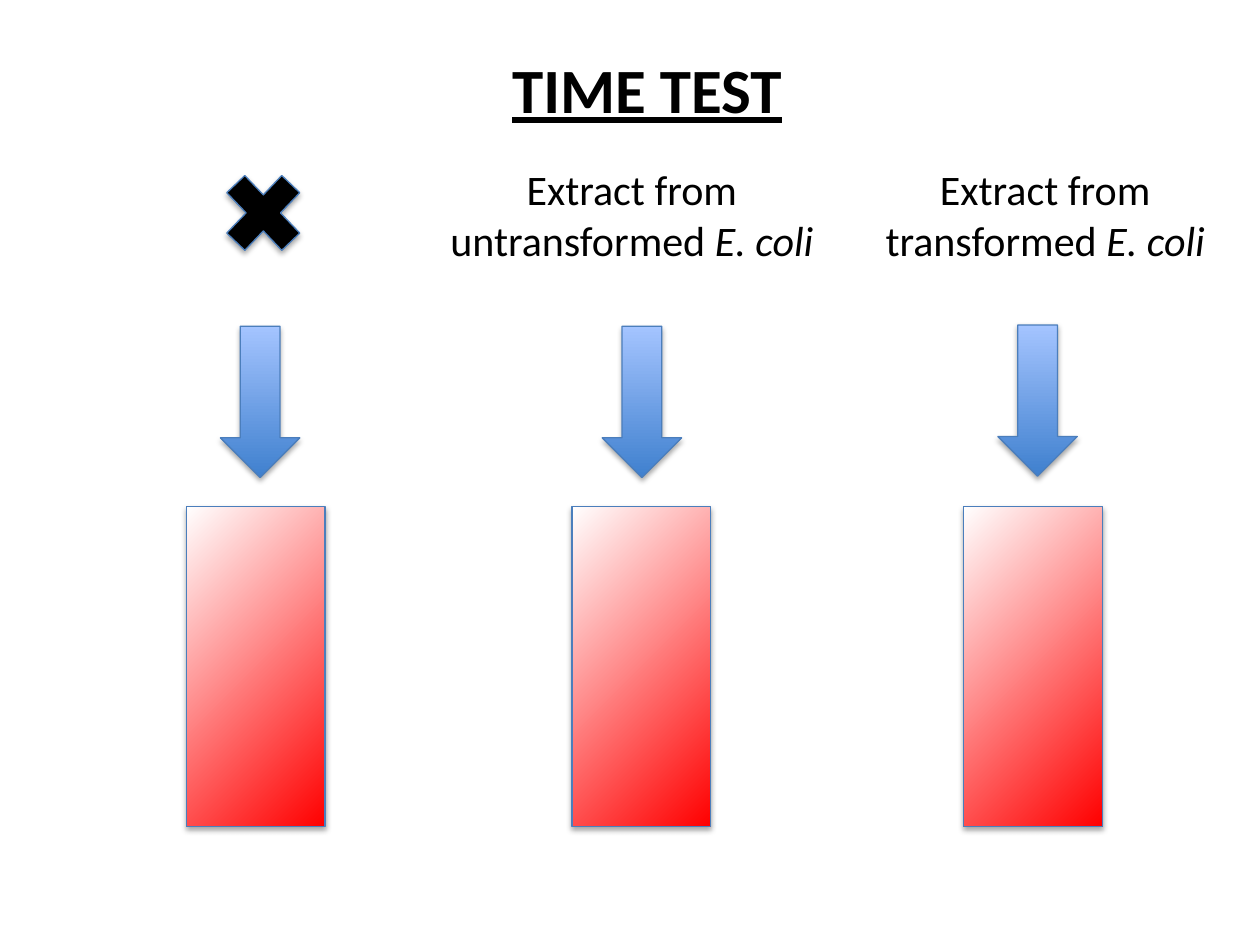
from lxml import etree
from pptx import Presentation
from pptx.dml.color import RGBColor
from pptx.enum.shapes import MSO_SHAPE
from pptx.enum.text import MSO_ANCHOR, MSO_AUTO_SIZE, PP_ALIGN
from pptx.oxml import parse_xml
from pptx.oxml.ns import nsdecls, qn
from pptx.util import Inches, Pt

RECTANGLE = MSO_SHAPE.RECTANGLE
DOWN_ARROW = MSO_SHAPE.DOWN_ARROW
CROSS = MSO_SHAPE.MATH_MULTIPLY
TOP = MSO_ANCHOR.TOP
CENTER = PP_ALIGN.CENTER
FIT_SHAPE = MSO_AUTO_SIZE.SHAPE_TO_FIT_TEXT

BLACK = RGBColor(0x00, 0x00, 0x00)
WHITE = RGBColor(0xFF, 0xFF, 0xFF)
RED = RGBColor(0xFF, 0x00, 0x00)
DARK_BLUE = RGBColor(0x3F, 0x80, 0xCE)
LIGHT_BLUE = RGBColor(0xA4, 0xC4, 0xFF)
OUTLINE = RGBColor(0x4B, 0x7E, 0xBC)

TITLE_FORMAT = {"name": "Calibri", "size": Pt(36), "bold": True, "underline": True}
CAPTION_FORMAT = {"name": "Calibri", "size": Pt(24)}

TUBE_LEFTS = (1.48, 4.54, 7.65)
ARROW_PLACES = ((1.75, 2.59), (4.78, 2.59), (7.92, 2.58))
CAPTIONS = (
    (3.31, "Extract from untransformed "),
    (6.59, "Extract from transformed "),
)


def add_span(para, text, formats):
    span = para.add_run()
    span.text = text
    span.font.color.rgb = BLACK
    for name, value in formats.items():
        setattr(span.font, name, value)


def set_frame(frame):
    """Wrap the text, grow with it, and return the centred first paragraph."""
    frame.word_wrap = True
    frame.auto_size = FIT_SHAPE
    frame.vertical_anchor = TOP
    para = frame.paragraphs[0]
    para.alignment = CENTER
    return para


def add_title(page, text):
    title = page.shapes.title
    title.left, title.top = Inches(2.01), Inches(0.35)
    title.width, title.height = Inches(6.25), Inches(0.71)
    add_span(set_frame(title.text_frame), text, TITLE_FORMAT)


def add_caption(page, left, text, species):
    box = page.shapes.add_textbox(
        Inches(left), Inches(1.25), Inches(3.41), Inches(0.91))
    para = set_frame(box.text_frame)
    add_span(para, text, CAPTION_FORMAT)
    add_span(para, species, {**CAPTION_FORMAT, "italic": True})


def add_shadow(shape):
    shape.shadow.inherit = False
    effects = shape._element.spPr.find(qn("a:effectLst"))
    effects.append(parse_xml(
        f'<a:outerShdw {nsdecls("a")} blurRad="40000" dist="23000" '
        'dir="5400000" rotWithShape="0"><a:srgbClr val="000000">'
        '<a:alpha val="35000"/></a:srgbClr></a:outerShdw>'))


def add_figure(page, kind, left, top, width, height):
    shape = page.shapes.add_shape(
        kind, Inches(left), Inches(top), Inches(width), Inches(height))
    shape.line.color.rgb = OUTLINE
    shape.line.width = Pt(0.75)
    return shape


def set_gradient(shape, start, end):
    shape.fill.gradient()
    shape.fill.gradient_angle = 90
    for stop, color in zip(shape.fill.gradient_stops, (start, end)):
        stop.color.rgb = color


def add_tube(page, left):
    tube = add_figure(page, RECTANGLE, left, 4.02, 1.1, 2.54)
    set_gradient(tube, RED, WHITE)
    # Radiate from the lower right corner instead of along a line
    gradient = tube._element.spPr.find(qn("a:gradFill"))
    gradient.remove(gradient.find(qn("a:lin")))
    radial = etree.SubElement(gradient, qn("a:path"), path="circle")
    etree.SubElement(radial, qn("a:fillToRect"), l="100000", t="100000")
    add_shadow(tube)


def add_arrow(page, left, top):
    arrow = add_figure(page, DOWN_ARROW, left, top, 0.63, 1.2)
    set_gradient(arrow, DARK_BLUE, LIGHT_BLUE)
    add_shadow(arrow)


def add_cross(page):
    cross = add_figure(page, CROSS, 1.67, 1.25, 0.84, 0.88)
    cross.fill.solid()
    cross.fill.fore_color.rgb = BLACK
    add_shadow(cross)


def main():
    deck = Presentation()
    deck.slide_width, deck.slide_height = Inches(10), Inches(7.5)
    page = deck.slides.add_slide(deck.slide_layouts[5])

    # Three tubes, each with an arrow pointing into it
    for left in TUBE_LEFTS:
        add_tube(page, left)
    for left, top in ARROW_PLACES:
        add_arrow(page, left, top)

    # What is added to each tube: nothing, or an extract
    add_cross(page)
    for left, text in CAPTIONS:
        add_caption(page, left, text, "E. coli")

    add_title(page, "TIME TEST")
    deck.save("out.pptx")


if __name__ == "__main__":
    main()
